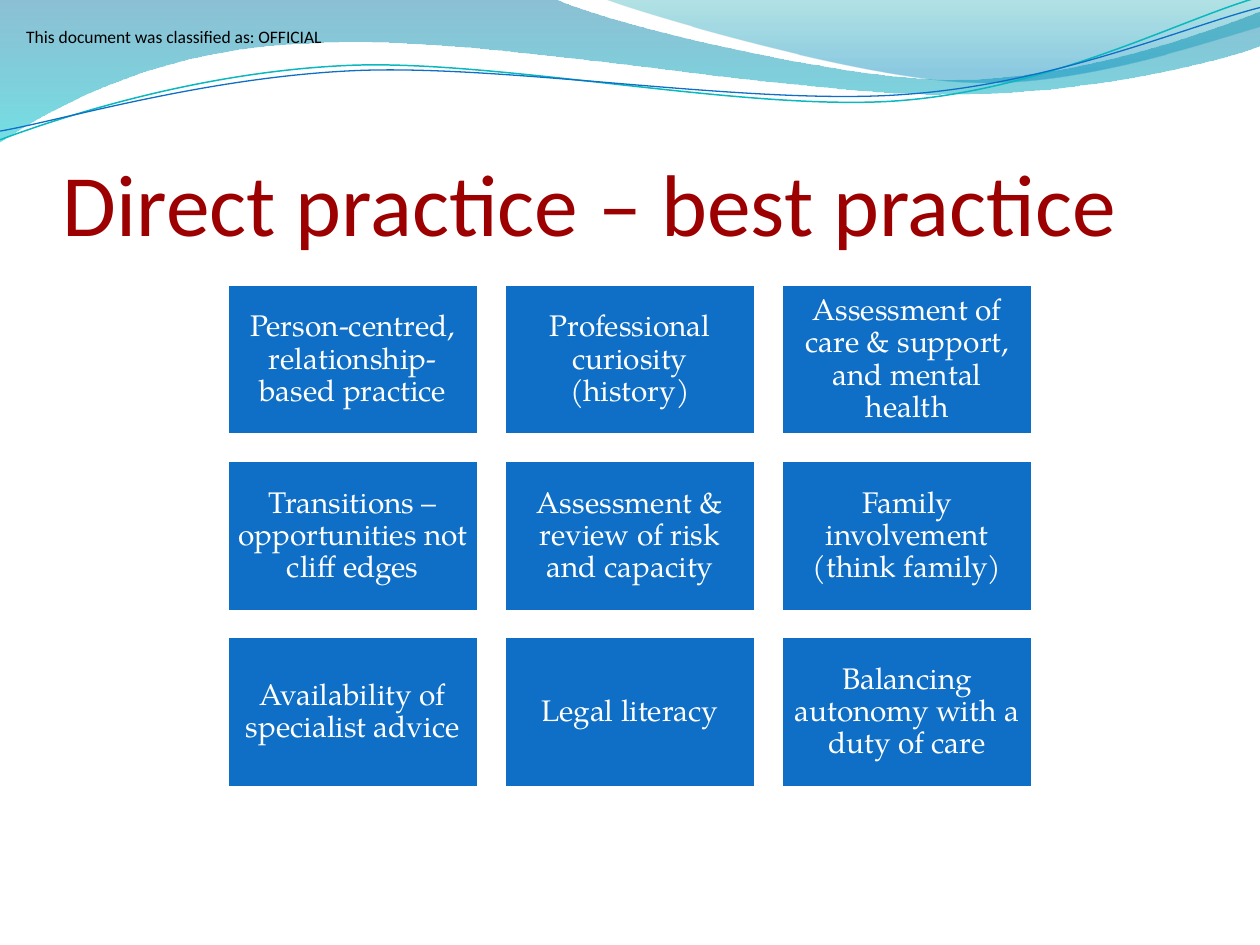
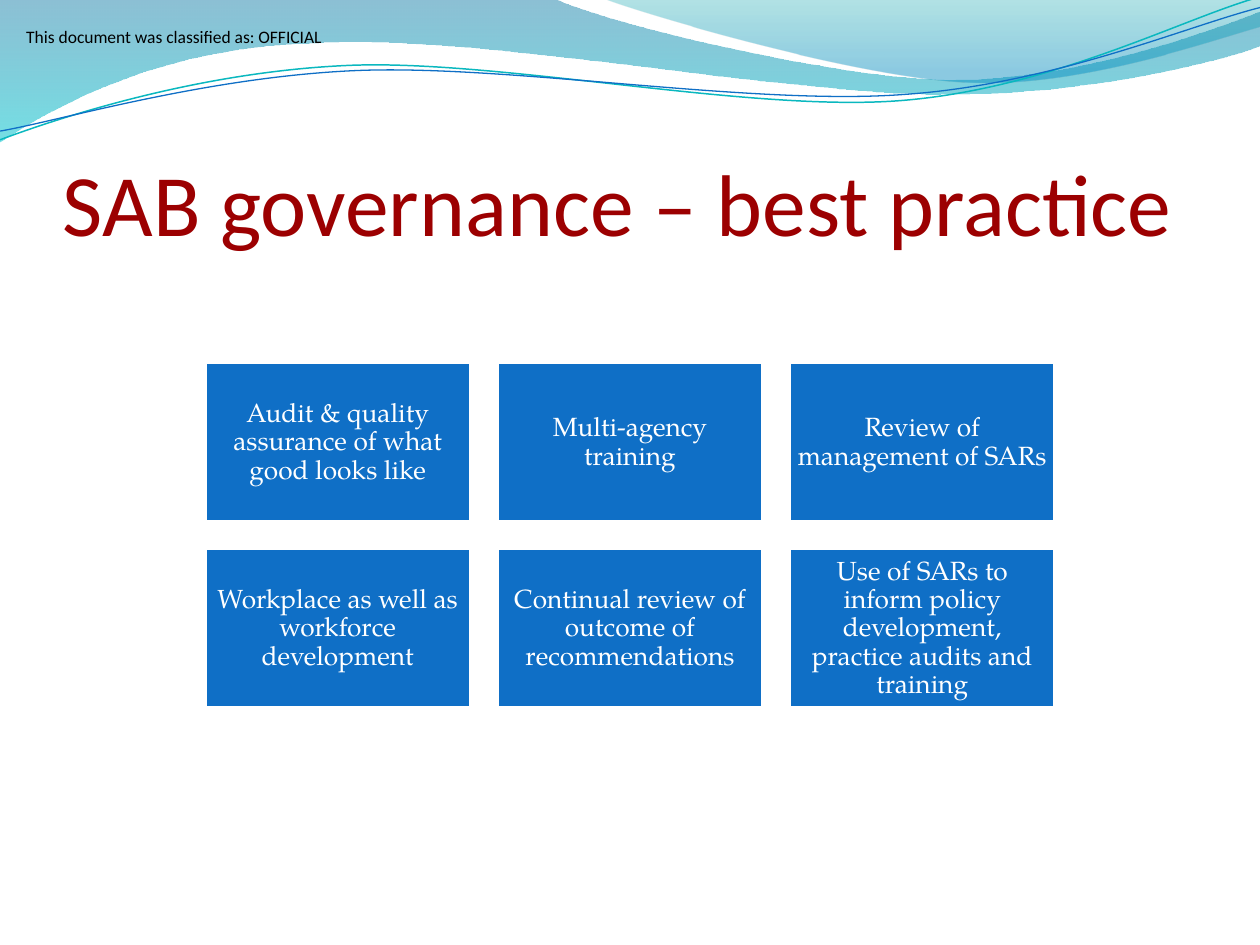
from lxml.etree import SubElement
from pptx import Presentation
from pptx.dml.color import RGBColor
from pptx.enum.shapes import MSO_SHAPE
from pptx.enum.text import MSO_ANCHOR, PP_ALIGN
from pptx.oxml.ns import qn
from pptx.util import Pt

SLIDE_W, SLIDE_H = 720, 540
COLUMNS = 3

COLORS = {
    "white": "FFFFFF", "black": "000000", "title": "9C0001", "box": "0F6FC6",
    "wave_top": "0074A1", "wave_bottom": "00C6CF",
    "crest_top": "00A1A9", "crest_bottom": "008BBF", "teal": "0AB8BF",
}

CLASSIFICATION = "This document was classified as: OFFICIAL"
CLASS_STYLE = {"size": 10, "font": "Calibri", "color": "black"}
TITLE_STYLE = {"size": 50, "font": "Calibri", "color": "title"}
BOX_FONT = "TeX Gyre Pagella"

# Outlines list segments: one point is a line's end, three are a cubic curve.
WAVE = [
    [(0, 0)], [(316.8, -0.7)],
    [(342.7, 12.2), (478.1, 45.4), (545.8, 45.4)],
    [(614.2, 45.4), (689.8, 18.7), (720, 6.5)],
    [(720.7, 25.9)],
    [(707.8, 31.7), (626.4, 54.7), (537.1, 54)],
    [(447.8, 54), (275, 20.2), (185, 24.5)],
    [(92.9, 25.9), (33.1, 59.8), (-0.7, 81.4)],
    [(0, 0)],
]
CREST = [
    [(344.9, -0.7)],
    [(366.5, 7.9), (491, 44.6), (553.7, 46.8)],
    [(616.3, 49.7), (691.9, 23), (720, 15.1)],
    [(720, 0)], [(344.9, -0.7)],
]
TEAL_LINE = [
    [(0, 79.9)],
    [(34.6, 67), (113.8, 41), (199.4, 37.4)],
    [(284.4, 33.8), (427, 64.1), (513.4, 57.6)],
    [(599.8, 51.1), (675.4, 10.8), (718.6, -1.4)],
]
BLUE_LINE = [
    [(0, 74.9)],
    [(33.8, 69.1), (118.1, 43.9), (203.8, 40.3)],
    [(290.2, 36.7), (429.8, 60.5), (516.2, 54)],
    [(601.9, 48.2), (677.5, 15.1), (720, 4.3)],
]

SLIDES = [
    {
        "title": "Direct practice – best practice",
        "grid": {"top": 162.2, "width": 144, "gap": 14.4, "size": 17, "inset": 5},
        "labels": [
            "Person-centred, relationship-based practice",
            "Professional curiosity (history)",
            "Assessment of care & support, and mental health",
            "Transitions – opportunities not cliff edges",
            "Assessment & review of risk and capacity",
            "Family involvement (think family)",
            "Availability of specialist advice",
            "Legal literacy",
            "Balancing autonomy with a duty of care",
        ],
    },
    {
        "title": "SAB governance – best practice",
        "grid": {"top": 207.2, "width": 151.8, "gap": 15.2, "size": 15, "inset": 4.3},
        "labels": [
            "Audit & quality assurance of what good looks like",
            "Multi-agency training",
            "Review of management of SARs",
            "Workplace as well as workforce development",
            "Continual review of outcome of recommendations",
            "Use of SARs to inform policy development, practice audits and training",
        ],
    },
]


def rgb(name):
    return RGBColor.from_string(COLORS[name])


def add_outline(s, outline, close):
    """Build a freeform through every point, then bend each triple into a curve."""
    points = [(Pt(x), Pt(y)) for segment in outline for x, y in segment]
    builder = s.shapes.build_freeform(*points[0])
    builder.add_line_segments(points[1:], close=close)
    sp = builder.convert_to_shape()
    sp.shadow.inherit = False
    lines = iter(list(sp._element.iter(qn("a:lnTo"))))
    for segment in outline[1:]:
        first, *others = [next(lines) for _ in segment]
        if others:
            first.tag = qn("a:cubicBezTo")
        for line in others:
            first.append(line[0])
            line.getparent().remove(line)
    return sp


def add_gradient_band(s, outline, stops):
    """Fill downwards; each stop is (position, colour, opacity in percent)."""
    sp = add_outline(s, outline, close=True)
    sp.line.fill.background()
    sp.fill.gradient()
    sp.fill.gradient_angle = 270
    for stop, (position, color, _) in zip(sp.fill.gradient_stops, stops):
        stop.position = position
        stop.color.rgb = rgb(color)
    for clr, (_, _, opacity) in zip(sp._element.iter(qn("a:srgbClr")), stops):
        SubElement(clr, qn("a:alpha")).set("val", str(opacity * 1000))


def add_wavy_line(s, outline, color, width):
    sp = add_outline(s, outline, close=False)
    sp.fill.background()
    sp.line.color.rgb = rgb(color)
    sp.line.width = Pt(width)


def set_text(sp, text, style, insets=(0, 0, 0, 0), align=PP_ALIGN.LEFT,
             anchor=MSO_ANCHOR.TOP, wrap=True, spacing=1.0):
    tf = sp.text_frame
    sides = ("margin_left", "margin_top", "margin_right", "margin_bottom")
    frame_format = dict(zip(sides, map(Pt, insets)),
                        word_wrap=wrap, vertical_anchor=anchor)
    for name, value in frame_format.items():
        setattr(tf, name, value)
    p = tf.paragraphs[0]
    p.alignment = align
    p.line_spacing = spacing
    r = p.add_run()
    r.text = text
    r.font.size = Pt(style["size"])
    r.font.name = style["font"]
    r.font.color.rgb = rgb(style["color"])


def add_text(s, box, text, style, **text_format):
    sp = s.shapes.add_textbox(*map(Pt, box))
    set_text(sp, text, style, **text_format)


def add_box_grid(s, labels, top, width, gap, size, inset):
    """Lay labelled boxes in centred rows, each box 0.6 as high as wide."""
    height = 0.6 * width
    left = (SLIDE_W - COLUMNS * width - (COLUMNS - 1) * gap) / 2
    style = {"size": size, "font": BOX_FONT, "color": "white"}
    for i, label in enumerate(labels):
        row, col = divmod(i, COLUMNS)
        box = (left + col * (width + gap), top + row * (height + gap), width, height)
        sp = s.shapes.add_shape(MSO_SHAPE.RECTANGLE, *map(Pt, box))
        sp.shadow.inherit = False
        sp.fill.solid()
        sp.fill.fore_color.rgb = rgb("box")
        sp.line.color.rgb = rgb("white")
        sp.line.width = Pt(2)
        set_text(sp, label, style, insets=(inset,) * 4, align=PP_ALIGN.CENTER,
                 anchor=MSO_ANCHOR.MIDDLE, spacing=0.9)


def add_header(s, title):
    add_gradient_band(s, WAVE, [(0, "wave_top", 45), (1, "wave_bottom", 55)])
    add_gradient_band(s, CREST, [(0, "crest_top", 30), (0.8, "crest_bottom", 45)])
    add_wavy_line(s, TEAL_LINE, "teal", 0.85)
    add_wavy_line(s, BLUE_LINE, "box", 0.75)
    add_text(s, (15, 15, 171, 12), CLASSIFICATION, CLASS_STYLE, wrap=False)
    add_text(s, (36, 55.4, 648, 90), title, TITLE_STYLE,
             insets=(0, 3.6, 0, 0), anchor=MSO_ANCHOR.BOTTOM)


def main():
    prs = Presentation()
    prs.slide_width, prs.slide_height = Pt(SLIDE_W), Pt(SLIDE_H)
    for content in SLIDES:
        s = prs.slides.add_slide(prs.slide_layouts[6])
        add_header(s, content["title"])
        add_box_grid(s, content["labels"], **content["grid"])
    prs.save("out.pptx")


if __name__ == "__main__":
    main()
